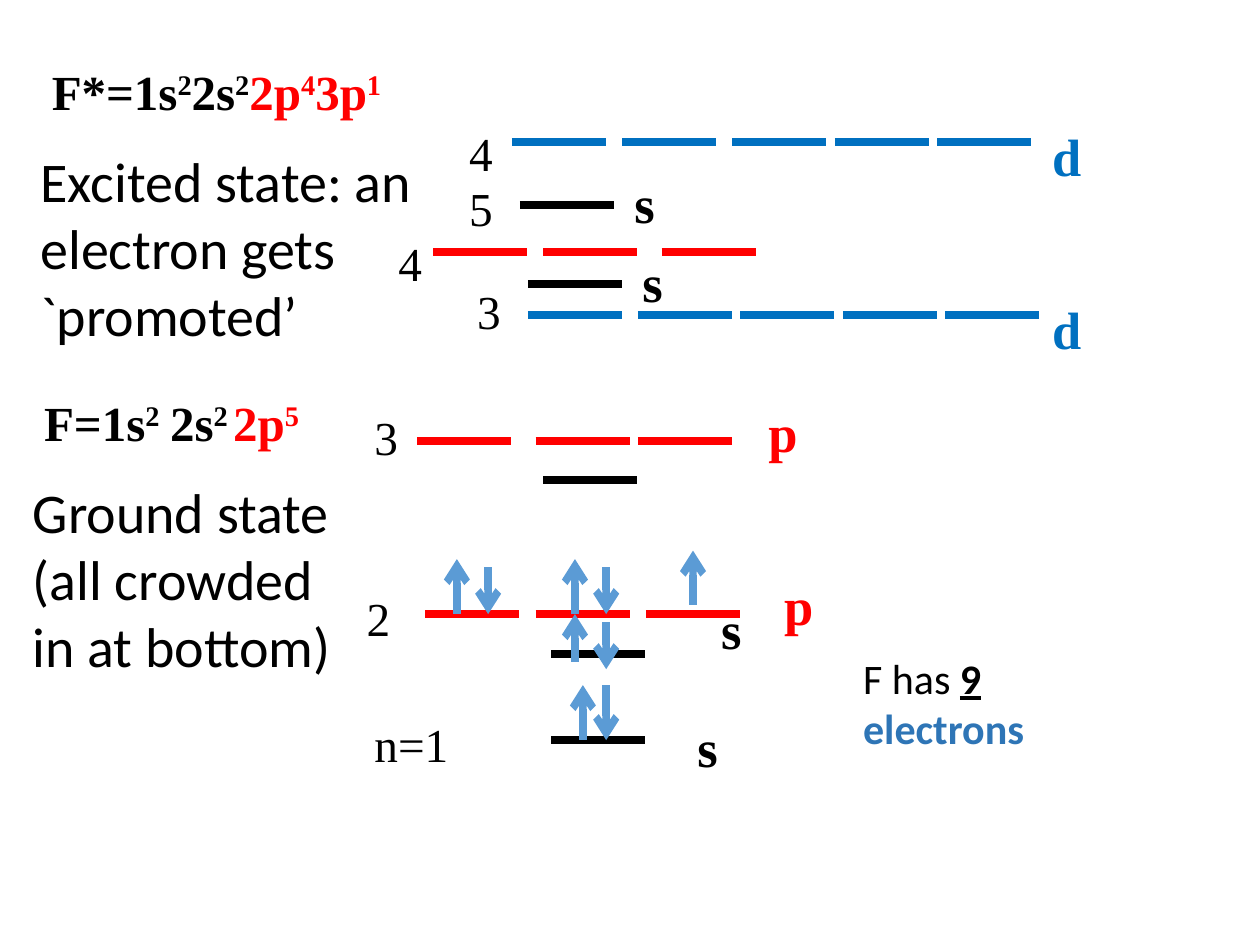
from dataclasses import dataclass
from typing import NamedTuple, Optional

import lxml.etree
import pptx
import pptx.dml.color
import pptx.enum.shapes
import pptx.enum.text
import pptx.oxml.ns
import pptx.util

Cm = pptx.util.Cm
qn = pptx.oxml.ns.qn


@dataclass(frozen=True)
class Theme:
    black: str = "000000"
    red: str = "FF0000"
    blue: str = "0070C0"
    spin: str = "5B9BD5"
    note: str = "2E75B6"
    serif: str = "Times New Roman"
    sans: str = "Calibri"
    num: int = 27
    tag: int = 30
    config: int = 28
    body: int = 32
    small: int = 24
    level: float = 4.75
    arrow: float = 4.25


T = Theme()
WIDTH = 1.9


class Run(NamedTuple):
    text: str
    hue: str = T.black
    bold: bool = False
    under: bool = False
    sup: bool = False


class Label(NamedTuple):
    text: str
    x: float
    y: float


class Level(NamedTuple):
    y: float
    hue: str
    xs: tuple[float, ...]
    num: Optional[Label] = None
    tag: Optional[Label] = None


class Spin(NamedTuple):
    x: float
    start: float
    tip: float


LEVELS = [
    Level(14.92, T.black, (11.11,), Label("n=1", 7.3, 14.29), Label("s", 13.81, 14.29)),
    Level(13.18, T.black, (11.11,), None, Label("s", 14.29, 11.91)),
    Level(12.38, T.red, (8.57, 10.8, 13.02), Label("2", 7.14, 11.75), Label("p", 15.56, 11.43)),
    Level(9.68, T.black, (10.95,)),
    Level(8.89, T.red, (8.41, 10.8, 12.86), Label("3", 7.3, 8.1), Label("p", 15.24, 7.94)),
    Level(6.35, T.blue, (10.64, 12.86, 14.92, 16.99, 19.05), Label("3", 9.37, 5.56), Label("d", 20.96, 5.87)),
    Level(5.72, T.black, (10.64,), None, Label("s", 12.7, 4.92)),
    Level(5.08, T.red, (8.73, 10.95, 13.34), Label("4", 7.78, 4.6)),
    Level(4.13, T.black, (10.48,), Label("5", 9.21, 3.49), Label("s", 12.54, 3.33)),
    Level(2.86, T.blue, (10.32, 12.54, 14.76, 16.83, 18.89), Label("4", 9.21, 2.38), Label("d", 20.96, 2.38)),
]

SPINS = [
    Spin(11.75, 14.92, 13.81), Spin(12.22, 13.81, 14.92),
    Spin(11.59, 13.34, 12.38), Spin(12.22, 12.54, 13.49),
    Spin(9.21, 12.38, 11.27), Spin(9.84, 11.43, 12.38),
    Spin(11.59, 12.38, 11.27), Spin(12.22, 11.43, 12.38),
    Spin(13.97, 12.19, 11.1),
]


def rgb(hue: str) -> pptx.dml.color.RGBColor:
    return pptx.dml.color.RGBColor.from_string(hue)


def shell(base: str, power: str, hue: str = T.black) -> list[Run]:
    return [Run(base, hue, True), Run(power, hue, True, sup=True)]


def write(slide, paras: list[list[Run]], *, at: tuple[float, float, float, float],
          size: int, font: str, holder=None) -> None:
    box = [Cm(n) for n in at]
    shape = holder
    if shape is None:
        shape = slide.shapes.add_textbox(*box)
    else:
        shape.left, shape.top, shape.width, shape.height = box
    frame = shape.text_frame
    frame.word_wrap = True
    frame.auto_size = pptx.enum.text.MSO_AUTO_SIZE.NONE
    frame.vertical_anchor = pptx.enum.text.MSO_ANCHOR.TOP
    for i, runs in enumerate(paras):
        para = frame.add_paragraph() if i else frame.paragraphs[0]
        para.alignment = pptx.enum.text.PP_ALIGN.LEFT
        para.space_before = pptx.util.Pt(0)
        props = para._p.get_or_add_pPr()
        props.set("marL", "0")
        props.set("indent", "0")
        lxml.etree.SubElement(props, qn("a:buNone"))
        for part in runs:
            run = para.add_run()
            run.text = part.text
            face = run.font
            face.name, face.size = font, pptx.util.Pt(size)
            face.bold, face.underline = part.bold, part.under
            face.color.rgb = rgb(part.hue)
            if part.sup:
                run._r.get_or_add_rPr().set("baseline", "30000")


def stroke(slide, start: tuple[float, float], end: tuple[float, float],
           hue: str, weight: float, head: bool = False) -> None:
    line = slide.shapes.add_connector(
        pptx.enum.shapes.MSO_CONNECTOR.STRAIGHT,
        *(Cm(n) for n in (*start, *end)))
    line.line.color.rgb = rgb(hue)
    line.line.width = pptx.util.Pt(weight)
    props = line._element.spPr
    if head:
        lxml.etree.SubElement(props.find(qn("a:ln")), qn("a:tailEnd"), type="arrow")
    lxml.etree.SubElement(props, qn("a:effectLst"))


def draw(slide, level: Level) -> None:
    for x in level.xs:
        stroke(slide, (x, level.y), (x + WIDTH, level.y), level.hue, T.level)
    if level.num:
        text, x, y = level.num
        wide = 2.24 if len(text) > 1 else 0.79
        write(slide, [[Run(text)]], at=(x, y, wide, 1.43), size=T.num, font=T.serif)
    if level.tag:
        text, x, y = level.tag
        write(slide, [[Run(text, level.hue, True)]], at=(x, y, 1.75, 1.55),
              size=T.tag, font=T.serif)


def main() -> None:
    deck = pptx.Presentation()
    deck.slide_width, deck.slide_height = Cm(25.4), Cm(19.05)
    slide = deck.slides.add_slide(deck.slide_layouts[1])

    title = (shell("F*=1s", "2") + shell("2s", "2")
             + shell("2p", "4", T.red) + shell("3p", "1", T.red))
    write(slide, [title], at=(0.79, 1.11, 8.1, 1.45), size=T.config,
          font=T.serif, holder=slide.shapes.title)
    write(slide, [[Run("Excited state: an electron gets `promoted’")]],
          at=(0.56, 2.82, 8.41, 4.37), size=T.body, font=T.sans,
          holder=slide.placeholders[1])

    for level in LEVELS:
        draw(slide, level)
    for spin in SPINS:
        stroke(slide, (spin.x, spin.start), (spin.x, spin.tip), T.spin, T.arrow, True)

    ground = [
        (shell("F=1s", "2"), 0.64, 3.02),
        (shell("2s", "2"), 3.18, 1.75),
        (shell("2p", "5", T.red), 4.45, 2.39),
    ]
    for runs, x, wide in ground:
        write(slide, [runs], at=(x, 7.78, wide, 1.45), size=T.config, font=T.serif)
    write(slide, [[Run("Ground state")], [Run("(all crowded in at bottom)")]],
          at=(0.41, 9.5, 6.68, 4.37), size=T.body, font=T.sans)
    write(slide, [[Run("F has "), Run("9", bold=True, under=True), Run(" "),
                   Run("electrons", T.note, True)]],
          at=(17.15, 13.02, 4.6, 2.31), size=T.small, font=T.sans)

    deck.save("out.pptx")


if __name__ == "__main__":
    main()
